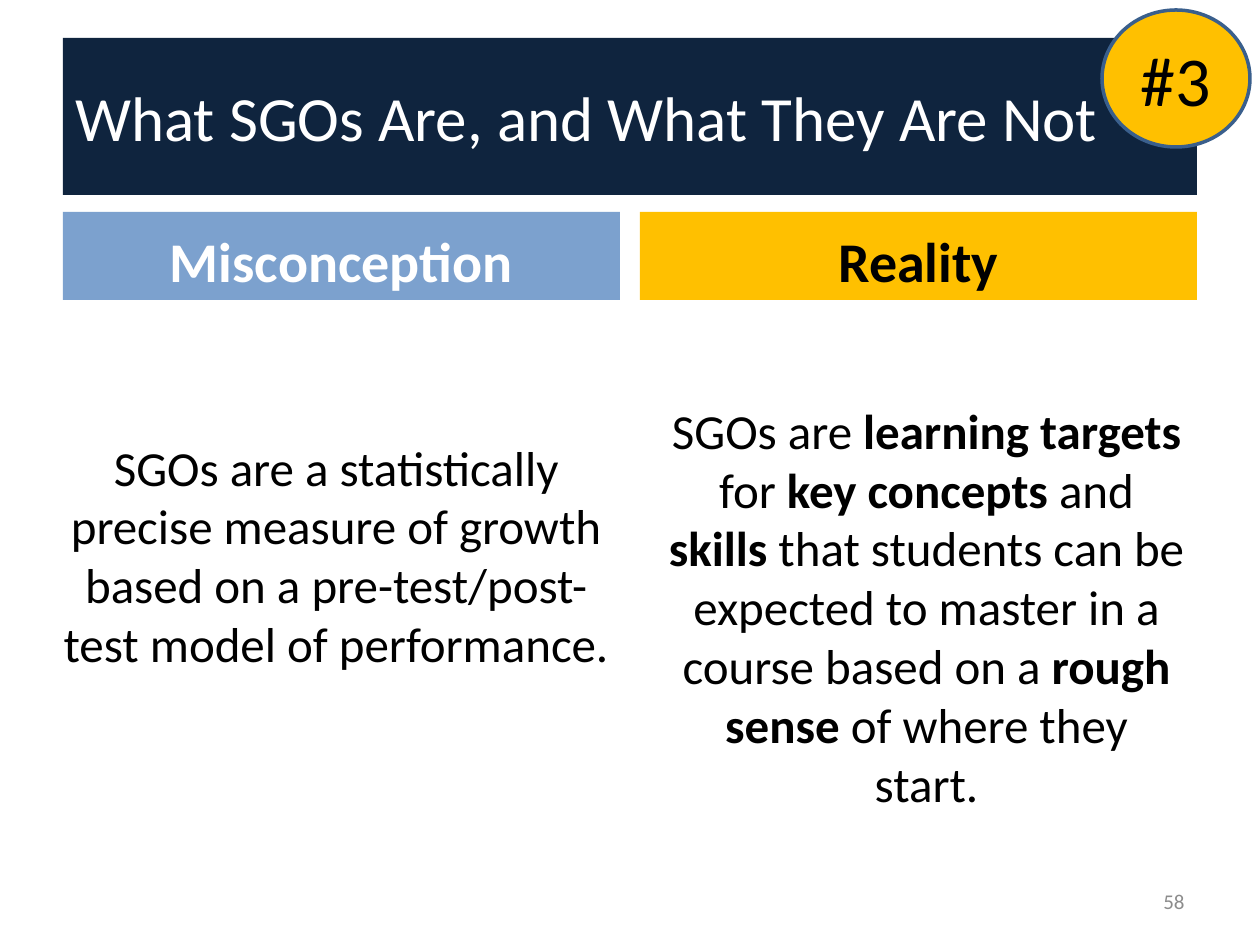
from dataclasses import dataclass

from pptx import Presentation
from pptx.dml.color import RGBColor
from pptx.enum.shapes import MSO_SHAPE
from pptx.enum.text import MSO_ANCHOR, PP_ALIGN
from pptx.util import Pt

EMU_PER_PX = 914400 / 126


def px(length):
    return round(length * EMU_PER_PX)


@dataclass(frozen=True)
class Theme:
    font: str = "Calibri"
    navy: str = "0F243E"
    blue: str = "7CA1CE"
    gold: str = "FFC000"
    outline: str = "3A5F8C"
    white: str = "FFFFFF"
    black: str = "000000"
    gray: str = "8C8C8C"
    badge_size: int = 40
    title_size: int = 36
    heading_size: int = 32
    body_size: int = 28
    number_size: int = 12


def write_text(shape, text, *, font, size, color, align=PP_ALIGN.CENTER,
               anchor=MSO_ANCHOR.TOP, bold=False, indent=0):
    """Fill a shape with one paragraph; in text, ** switches bold on and off."""
    frame = shape.text_frame
    frame.word_wrap = True
    frame.vertical_anchor = anchor
    para = frame.paragraphs[0]
    para.alignment = align
    if indent:
        para._p.get_or_add_pPr().set("marL", str(px(indent)))
    for index, part in enumerate(text.split("**")):
        if not part:
            continue
        span = para.add_run()
        span.text = part
        span.font.name = font
        span.font.size = Pt(size)
        span.font.bold = bold or index % 2 == 1
        span.font.color.rgb = RGBColor.from_string(color)


class PageBuilder:
    def __init__(self, page, theme):
        self.page = page
        self.theme = theme

    def panel(self, box, fill, text, kind=MSO_SHAPE.RECTANGLE, line=None, **style):
        shape = self.page.shapes.add_shape(kind, *map(px, box))
        shape.shadow.inherit = False
        shape.fill.solid()
        shape.fill.fore_color.rgb = RGBColor.from_string(fill)
        if line:
            shape.line.color.rgb = RGBColor.from_string(line)
            shape.line.width = Pt(2)
        else:
            shape.line.fill.background()
        write_text(shape, text, font=self.theme.font, **style)

    def text(self, box, text, **style):
        shape = self.page.shapes.add_textbox(*map(px, box))
        write_text(shape, text, font=self.theme.font, **style)


def main():
    deck = Presentation()
    deck.slide_width, deck.slide_height = px(1260), px(945)
    theme = Theme()
    builder = PageBuilder(deck.slides.add_slide(deck.slide_layouts[6]), theme)

    builder.panel((63, 38, 1134, 157), theme.navy,
                  "What SGOs Are, and What They Are Not",
                  size=theme.title_size, color=theme.white,
                  align=PP_ALIGN.LEFT, anchor=MSO_ANCHOR.MIDDLE)

    headings = (("Misconception", theme.blue, theme.white),
                ("Reality", theme.gold, theme.black))
    width, gap = 557, 20
    for column, (heading, fill, color) in enumerate(headings):
        builder.panel((63 + column * (width + gap), 212, width, 88), fill, heading,
                      size=theme.heading_size, color=color, bold=True,
                      anchor=MSO_ANCHOR.BOTTOM)

    builder.text((609, 394, 588, 403),
                 "SGOs are **learning targets **for** key concepts **and** skills** "
                 "that students can be expected to master in a course based on a "
                 "**rough sense **of where they start.",
                 size=theme.body_size, color=theme.black, indent=47)
    builder.panel((1102, 10, 148, 137), theme.gold, "#3",
                  kind=MSO_SHAPE.OVAL, line=theme.outline,
                  size=theme.badge_size, color=theme.black, anchor=MSO_ANCHOR.MIDDLE)
    builder.text((42, 431, 588, 413),
                 "SGOs are a statistically precise measure of growth based on a "
                 "pre-test/post-test model of performance.",
                 size=theme.body_size, color=theme.black)
    builder.text((903, 876, 294, 50), "58",
                 size=theme.number_size, color=theme.gray,
                 align=PP_ALIGN.RIGHT, anchor=MSO_ANCHOR.MIDDLE)

    deck.save("out.pptx")


if __name__ == "__main__":
    main()
